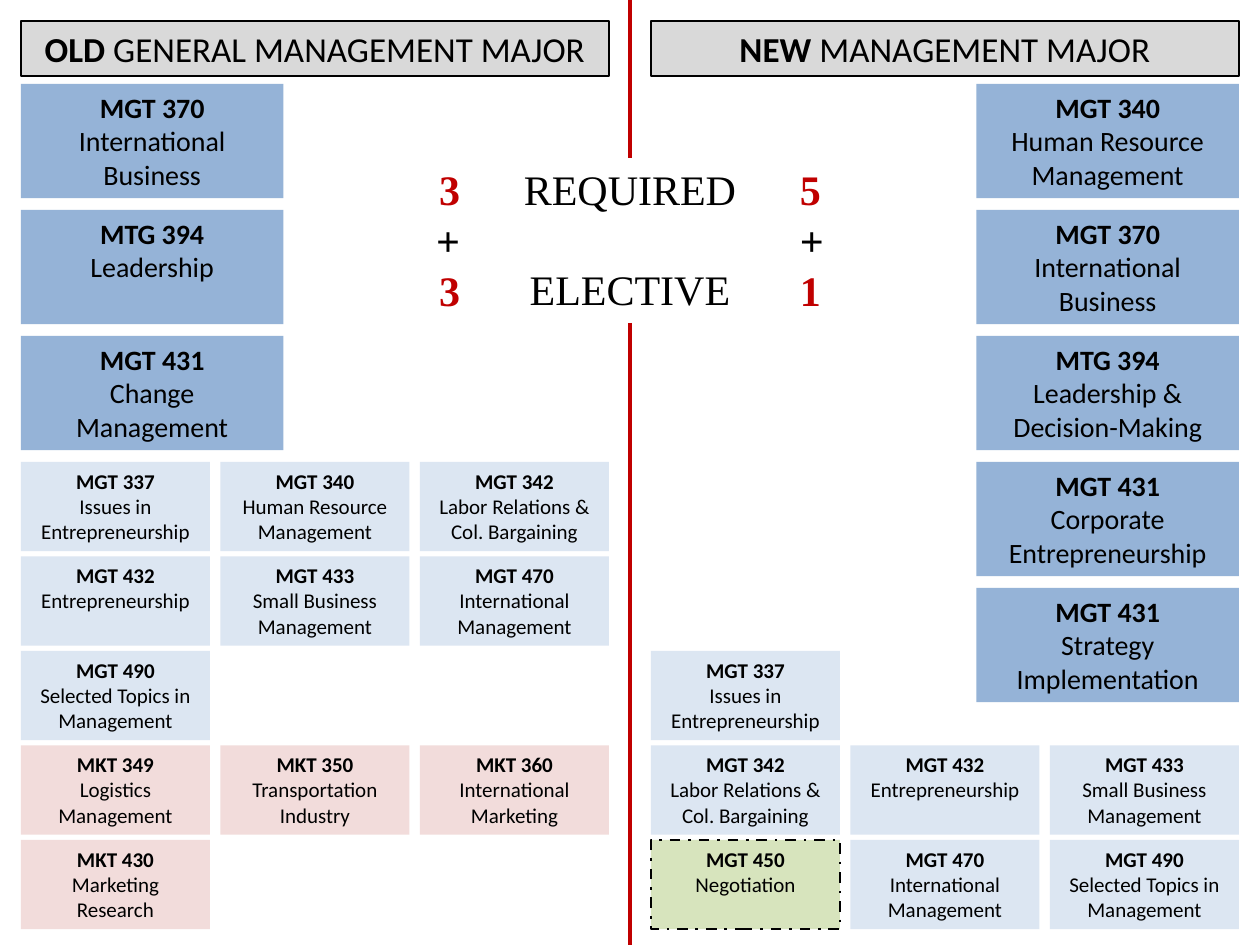
from pptx import Presentation
from pptx.dml.color import RGBColor
from pptx.enum.dml import MSO_LINE
from pptx.enum.shapes import MSO_CONNECTOR, MSO_SHAPE
from pptx.enum.text import MSO_ANCHOR, PP_ALIGN
from pptx.oxml.ns import qn
from pptx.util import Pt
from lxml import etree

PX = 9525
BLACK = RGBColor(0x00, 0x00, 0x00)
RED = RGBColor(0xC0, 0x00, 0x00)
GRAY = RGBColor(0xD9, 0xD9, 0xD9)
BLUE = RGBColor(0x95, 0xB3, 0xD7)
PALE_BLUE = RGBColor(0xDC, 0xE6, 0xF2)
PALE_RED = RGBColor(0xF2, 0xDC, 0xDB)
PALE_GREEN = RGBColor(0xD7, 0xE4, 0xBD)

LEFT_SIDE, RIGHT_SIDE = 16, 496
REQUIRED_TOP, REQUIRED_STEP = 64, 96
ELECTIVE_TOP, ELECTIVE_STEP, ELECTIVE_COLUMN_STEP = 352, 72, 152


def style_run(run, size, bold, color=BLACK, font="Calibri"):
    run.font.name = font
    run.font.size = Pt(size)
    run.font.bold = bold
    run.font.color.rgb = color


def add_box(left, top, width, height, fill, lines, size):
    box = slide.shapes.add_shape(
        MSO_SHAPE.RECTANGLE, left * PX, top * PX, width * PX, height * PX)
    box.shadow.inherit = False
    box.fill.solid()
    box.fill.fore_color.rgb = fill
    box.line.fill.background()
    frame = box.text_frame
    frame.word_wrap = True
    frame.vertical_anchor = MSO_ANCHOR.TOP
    frame.text = "\n".join(lines)
    for index, para in enumerate(frame.paragraphs):
        para.alignment = PP_ALIGN.CENTER
        for run in para.runs:
            style_run(run, size, index == 0)
    return box


deck = Presentation()
deck.slide_width = 960 * PX
deck.slide_height = 720 * PX
slide = deck.slides.add_slide(deck.slide_layouts[6])

headers = [
    (LEFT_SIDE, "OLD", " GENERAL MANAGEMENT MAJOR"),
    (RIGHT_SIDE, "NEW", " MANAGEMENT MAJOR"),
]
for left, version, major in headers:
    header = add_box(left, 16, 448, 42, GRAY, [version], 20)
    header.line.color.rgb = BLACK
    header.line.width = Pt(0.75)
    style_run_target = header.text_frame.paragraphs[0].add_run()
    style_run_target.text = major
    style_run(style_run_target, 20, False)

required_courses = [
    (16, [
        ("MGT 370", "International Business"),
        ("MTG 394", "Leadership"),
        ("MGT 431", "Change Management"),
    ]),
    (744, [
        ("MGT 340", "Human Resource Management"),
        ("MGT 370", "International Business"),
        ("MTG 394", "Leadership &", "Decision-Making"),
        ("MGT 431", "Corporate Entrepreneurship"),
        ("MGT 431", "Strategy Implementation"),
    ]),
]
for left, courses in required_courses:
    for row, lines in enumerate(courses):
        add_box(left, REQUIRED_TOP + row * REQUIRED_STEP, 200, 87, BLUE, lines, 16)

elective_courses = [
    (LEFT_SIDE, 0, PALE_BLUE, [
        ("MGT 337", "Issues in", "Entrepreneurship"),
        ("MGT 340", "Human Resource Management"),
        ("MGT 342", "Labor Relations &", "Col. Bargaining"),
    ]),
    (LEFT_SIDE, 1, PALE_BLUE, [
        ("MGT 432", "Entrepreneurship"),
        ("MGT 433", "Small Business Management"),
        ("MGT 470", "International", "Management"),
    ]),
    (LEFT_SIDE, 2, PALE_BLUE, [("MGT 490", "Selected Topics in Management")]),
    (LEFT_SIDE, 3, PALE_RED, [
        ("MKT 349", "Logistics", "Management"),
        ("MKT 350", "Transportation", "Industry"),
        ("MKT 360", "International", "Marketing"),
    ]),
    (LEFT_SIDE, 4, PALE_RED, [("MKT 430", "Marketing", "Research")]),
    (RIGHT_SIDE, 2, PALE_BLUE, [("MGT 337", "Issues in", "Entrepreneurship")]),
    (RIGHT_SIDE, 3, PALE_BLUE, [
        ("MGT 342", "Labor Relations &", "Col. Bargaining"),
        ("MGT 432", "Entrepreneurship"),
        ("MGT 433", "Small Business Management"),
    ]),
    (RIGHT_SIDE, 4, PALE_BLUE, [
        ("MGT 450", "Negotiation"),
        ("MGT 470", "International", "Management"),
        ("MGT 490", "Selected Topics in Management"),
    ]),
]
for side, row, fill, courses in elective_courses:
    for column, lines in enumerate(courses):
        course = add_box(side + column * ELECTIVE_COLUMN_STEP,
                         ELECTIVE_TOP + row * ELECTIVE_STEP, 144, 68, fill, lines, 12)
        if lines[0] == "MGT 450":
            course.fill.fore_color.rgb = PALE_GREEN
            course.line.color.rgb = BLACK
            course.line.width = Pt(1.5)
            course.line.dash_style = MSO_LINE.DASH_DOT

summary_columns = [
    (320, 40, PP_ALIGN.RIGHT, True, [("3", RED), ("+", BLACK), ("3", RED)]),
    (600, 40, PP_ALIGN.LEFT, True, [("5", RED), ("+", BLACK), ("1", RED)]),
    (376, 208, PP_ALIGN.CENTER, False, [("REQUIRED", BLACK), ("ELECTIVE", BLACK)]),
]
for left, width, alignment, bold, entries in summary_columns:
    summary = slide.shapes.add_textbox(left * PX, 120 * PX, width * PX, 126 * PX)
    frame = summary.text_frame
    frame.word_wrap = True
    frame.text = "\n".join(text for text, color in entries)
    for para, (text, color) in zip(frame.paragraphs, entries):
        para.alignment = alignment
        style_run(para.runs[0], 24, bold, color, "Times New Roman")
        if text == "ELECTIVE":
            para.space_before = Pt(28)

for top, bottom in [(0, 120), (246, 720)]:
    divider = slide.shapes.add_connector(
        MSO_CONNECTOR.STRAIGHT, 480 * PX, top * PX, 480 * PX, bottom * PX)
    divider.line.color.rgb = RED
    divider.line.width = Pt(2.25)
    etree.SubElement(divider.element.spPr, qn("a:effectLst"))

deck.save("out.pptx")
